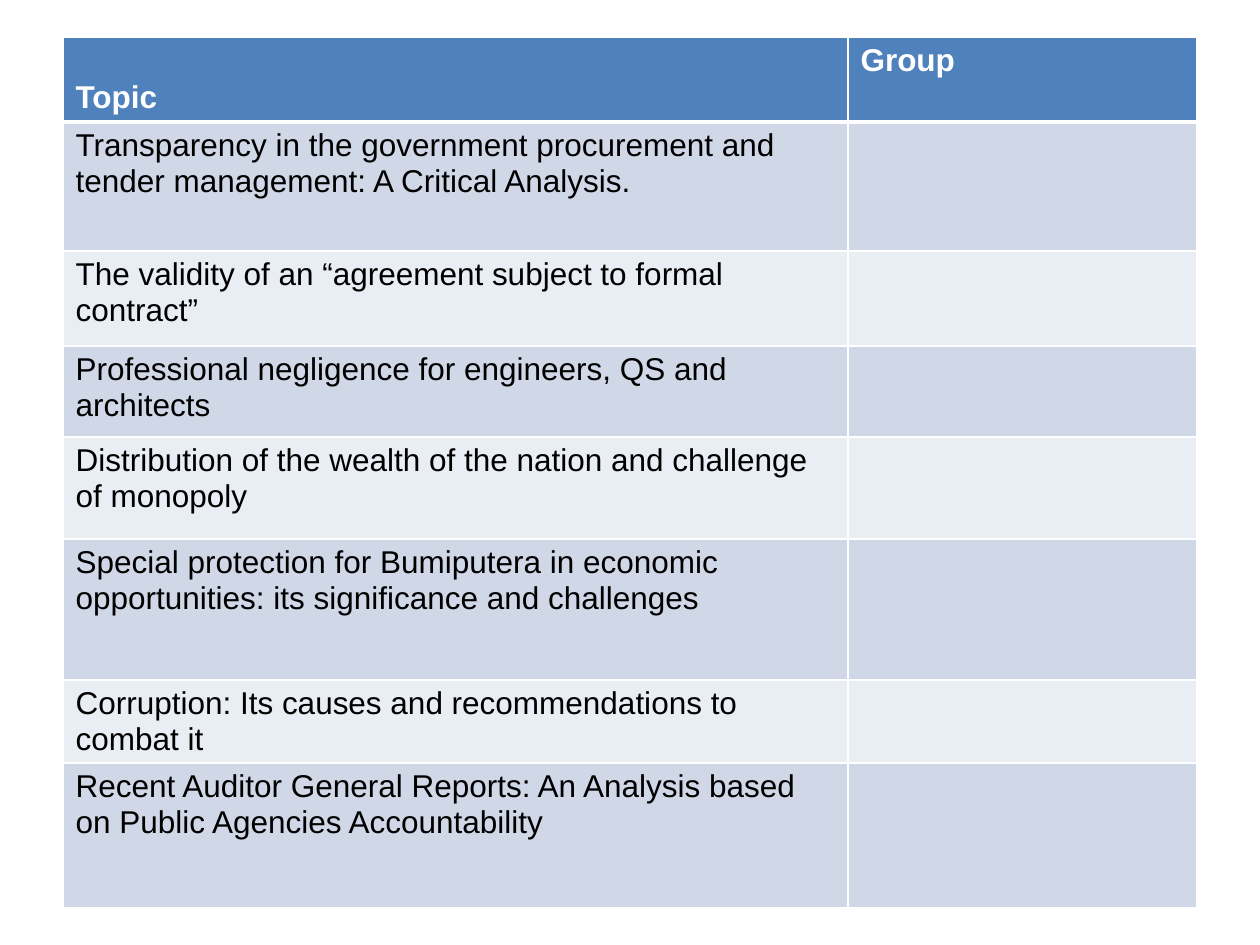
from typing import NamedTuple

from pptx import Presentation, util as u
from pptx.dml.color import RGBColor
from pptx.enum import text
from pptx.oxml import parse_xml
from pptx.oxml.ns import nsdecls

EMU_PER_PX = u.Inches(1) / 126
WHITE, BLACK = "FFFFFF", "000000"
HEADER, BAND_DARK, BAND_LIGHT = "4F81BD", "D0D8E8", "E9EDF4"
COLUMN_WIDTHS = (785, 349)


class Row(NamedTuple):
    height: int
    topic: str
    group: str = ""


ROWS = (
    Row(85, "Topic", "Group"),
    Row(129, "Transparency in the government procurement and tender management: A Critical Analysis."),
    Row(95, "The validity of an “agreement subject to formal contract”"),
    Row(91, "Professional negligence for engineers, QS and architects"),
    Row(102, "Distribution of the wealth of the nation and challenge of monopoly"),
    Row(141, "Special protection for Bumiputera in economic opportunities: its significance and challenges"),
    Row(83, "Corruption: Its causes and recommendations to combat it"),
    Row(145, "Recent Auditor General Reports: An Analysis based on Public Agencies Accountability"),
)


def px(n: int) -> u.Emu:
    return u.Emu(round(n * EMU_PER_PX))


def color(value: str) -> RGBColor:
    return RGBColor.from_string(value)


def add_borders(cell, top: int, bottom: int) -> None:
    tc_pr = cell._tc.get_or_add_tcPr()
    for side, width in (("L", 1), ("R", 1), ("T", top), ("B", bottom)):
        tc_pr.append(parse_xml(
            f'<a:ln{side} {nsdecls("a")} w="{u.Pt(width)}"><a:solidFill>'
            f'<a:srgbClr val="{WHITE}"/></a:solidFill></a:ln{side}>'))


def fill_cell(cell, wording: str, row: int) -> None:
    is_header = row == 0
    add_borders(cell, 3 if row == 1 else 1, 3 if is_header else 1)
    cell.fill.solid()
    band = BAND_DARK if row % 2 else BAND_LIGHT
    cell.fill.fore_color.rgb = color(HEADER if is_header else band)
    p = cell.text_frame.paragraphs[0]
    p.text = wording
    p.font.size = u.Pt(18)
    for r in p.runs:
        r.font.size = u.Pt(18)
        r.font.name = "Arial"
        r.font.bold = is_header
        r.font.color.rgb = color(WHITE if is_header else BLACK)


def add_topic_table(s) -> None:
    heights = [row.height for row in ROWS]
    table = s.shapes.add_table(len(ROWS), len(COLUMN_WIDTHS), px(63), px(37),
                               px(sum(COLUMN_WIDTHS)), px(sum(heights))).table
    for column, width in zip(table.columns, COLUMN_WIDTHS):
        column.width = px(width)
    for i, row in enumerate(ROWS):
        table.rows[i].height = px(row.height)
        for j, wording in enumerate((row.topic, row.group)):
            fill_cell(table.cell(i, j), wording, i)
    table.cell(0, 0).vertical_anchor = text.MSO_ANCHOR.BOTTOM


def main() -> None:
    prs = Presentation()
    prs.slide_width, prs.slide_height = px(1260), px(945)
    s = prs.slides.add_slide(prs.slide_layouts[6])
    add_topic_table(s)
    prs.save("out.pptx")


if __name__ == "__main__":
    main()
